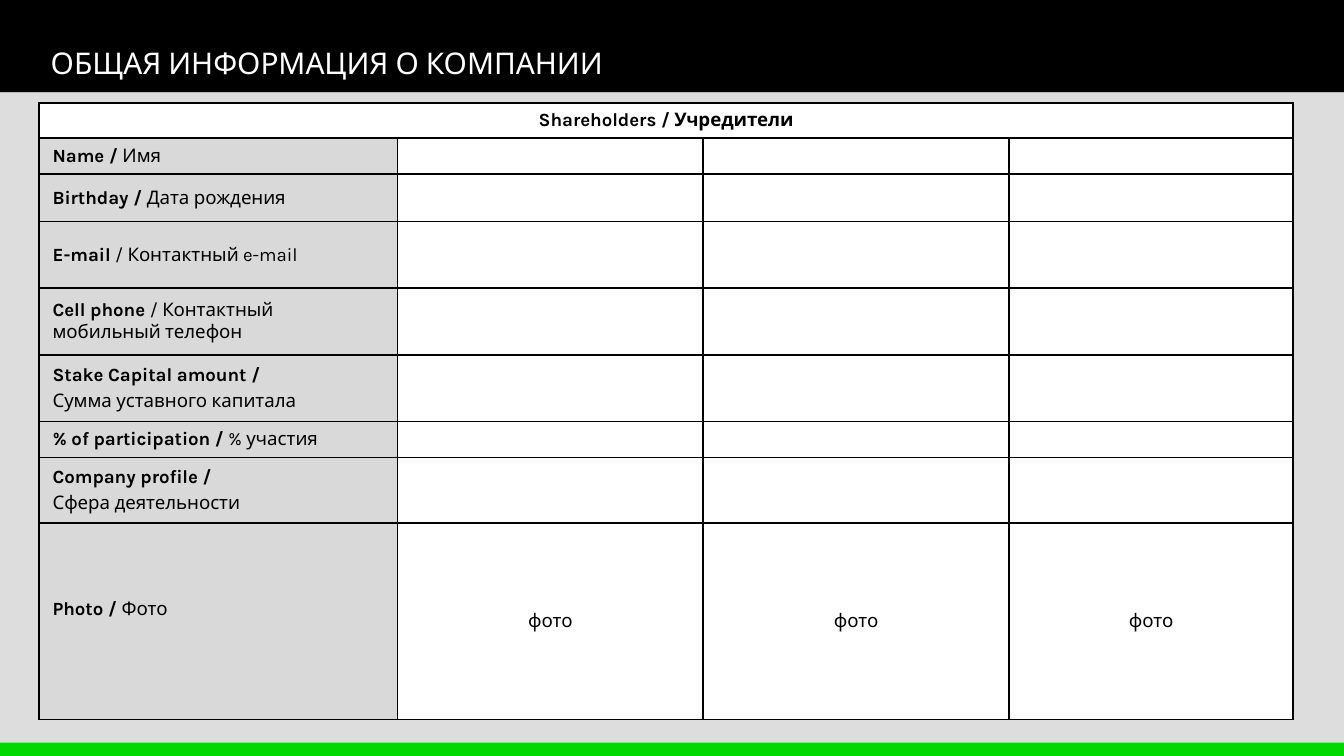
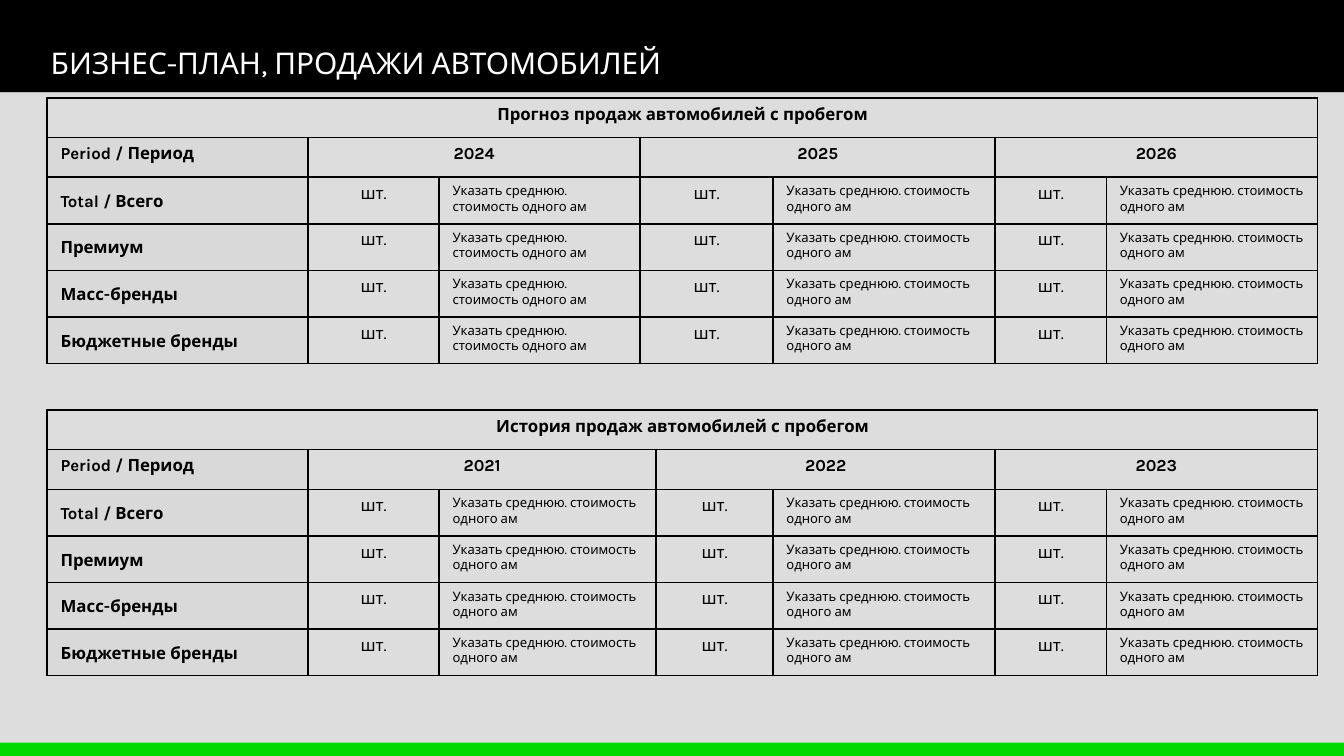
from lxml import etree
from pptx import Presentation
from pptx.dml.color import RGBColor
from pptx.enum.shapes import MSO_SHAPE
from pptx.enum.text import MSO_ANCHOR, PP_ALIGN
from pptx.oxml.ns import qn
from pptx.util import Cm, Pt

RECTANGLE = MSO_SHAPE.RECTANGLE
TOP, MIDDLE = MSO_ANCHOR.TOP, MSO_ANCHOR.MIDDLE
LEFT, CENTER = PP_ALIGN.LEFT, PP_ALIGN.CENTER

BLACK = RGBColor(0x00, 0x00, 0x00)
WHITE = RGBColor(0xFF, 0xFF, 0xFF)
BACKDROP = RGBColor(0xDD, 0xDD, 0xDD)
LABEL_GREY = RGBColor(0xD9, 0xD9, 0xD9)
GREEN = RGBColor(0x00, 0xD9, 0x00)

FONT = "Karla"
SLIDE_W, SLIDE_H = 25.4, 14.29
HEADER_H, FOOTER_H = 1.75, 0.25

# Shareholder form: paragraphs of (bold part, regular part), row height
SHAREHOLDER_ROWS = [
    ([("Name / ", "Имя")], 0.66),
    ([("Birthday / ", "Дата рождения")], 0.9),
    ([("E-mail", " / Контактный e-mail")], 1.26),
    ([("Cell phone ", "/ Контактный мобильный телефон")], 1.26),
    ([("Stake Capital amount /", ""), ("", "Сумма уставного капитала")], 1.26),
    ([("% of participation / ", "% участия")], 0.66),
    ([("Company profile /", ""), ("", "Сфера деятельности")], 1.24),
    ([("Photo / ", "Фото")], 3.71),
]
SEGMENTS = ["Total / Всего", "Премиум", "Масс-бренды", "Бюджетные бренды"]


def add_band(slide, top, height, colour):
    band = slide.shapes.add_shape(RECTANGLE, 0, Cm(top), Cm(SLIDE_W), Cm(height))
    band.shadow.inherit = False
    band.fill.solid()
    band.fill.fore_color.rgb = colour
    band.line.fill.background()


def set_font(paragraph, size, colour=BLACK, bold=None):
    font = paragraph.font
    font.name, font.size, font.bold = FONT, Pt(size), bold
    font.color.rgb = colour


def add_titled_slide(prs, title):
    slide = prs.slides.add_slide(prs.slide_layouts[6])
    add_band(slide, 0, HEADER_H, BLACK)
    add_band(slide, HEADER_H, SLIDE_H - HEADER_H, BACKDROP)
    add_band(slide, SLIDE_H - FOOTER_H, FOOTER_H, GREEN)
    heading = slide.shapes.add_textbox(Cm(0.71), Cm(0.05), Cm(19.2), Cm(1.5))
    heading.text_frame.word_wrap = True
    paragraph = heading.text_frame.paragraphs[0]
    paragraph.text = title
    paragraph.line_spacing = 2.0
    set_font(paragraph, 16, WHITE)
    return slide


def style_cell(cell, fill, size):
    """Black borders, fill, and a text size that keeps empty cells low."""
    properties = cell._tc.get_or_add_tcPr()
    for side in ("lnL", "lnR", "lnT", "lnB"):
        border = etree.SubElement(properties, qn(f"a:{side}"), w=str(Pt(1)))
        ink = etree.SubElement(border, qn("a:solidFill"))
        etree.SubElement(ink, qn("a:srgbClr"), val=str(BLACK))
    if fill is None:
        cell.fill.background()
    else:
        cell.fill.solid()
        cell.fill.fore_color.rgb = fill
    paragraph = cell.text_frame.paragraphs[0]
    etree.SubElement(paragraph._p, qn("a:endParaRPr"), sz=str(size * 100))


def add_grid(slide, left, top, widths, heights, fill, size):
    """Bordered table with a merged heading row and grey labels below it."""
    table = slide.shapes.add_table(
        len(heights), len(widths), Cm(left), Cm(top),
        Cm(sum(widths)), Cm(sum(heights))).table
    table.first_row = table.horz_banding = False
    for column, width in zip(table.columns, widths):
        column.width = Cm(width)
    for r, height in enumerate(heights):
        table.rows[r].height = Cm(height)
        for c in range(len(widths)):
            is_label = r > 0 and c == 0
            style_cell(table.cell(r, c), LABEL_GREY if is_label else fill, size)
    table.cell(0, 0).merge(table.cell(0, len(widths) - 1))
    return table


def write(cell, text, size, bold=False, align=LEFT, anchor=TOP):
    cell.vertical_anchor = anchor
    paragraph = cell.text_frame.paragraphs[0]
    paragraph.add_run().text = text
    paragraph.alignment = align
    set_font(paragraph, size, bold=bold)
    return paragraph


def tighten(cell):
    cell.margin_top = cell.margin_bottom = Cm(0.1)


def write_bilingual(cell, lines):
    cell.vertical_anchor = MIDDLE
    tighten(cell)
    frame = cell.text_frame
    for i, parts in enumerate(lines):
        paragraph = frame.add_paragraph() if i else frame.paragraphs[0]
        if i:
            paragraph.space_before = Pt(2)
        for text, bold in zip(parts, (True, False)):
            if text:
                run = paragraph.add_run()
                run.text = text
                run.font.bold = bold
        set_font(paragraph, 10)


def add_shareholder_form(slide):
    heights = [0.66] + [height for _, height in SHAREHOLDER_ROWS]
    table = add_grid(slide, 0.74, 1.95, [6.77, 5.78, 5.78, 5.37], heights,
                     WHITE, 10)
    tighten(table.cell(0, 0))
    write(table.cell(0, 0), "Shareholders / Учредители", 10, True, CENTER, MIDDLE)
    for r, (lines, _) in enumerate(SHAREHOLDER_ROWS, start=1):
        write_bilingual(table.cell(r, 0), lines)
    # The photo label sits slightly above the middle of its row
    photo_row = len(SHAREHOLDER_ROWS)
    table.cell(photo_row, 0).margin_bottom = Cm(0.55)
    for c in (1, 2, 3):
        write(table.cell(photo_row, c), "фото", 10, False, CENTER, MIDDLE)


def add_sales_table(slide, top, title, first_year, widths):
    heights = [0.75, 0.75] + [0.88] * len(SEGMENTS)
    table = add_grid(slide, 0.89, top, widths, heights, None, 9)
    write(table.cell(0, 0), title, 9, True, CENTER)
    write(table.cell(1, 0), "Period / Период", 9, True)
    pair_columns = range(1, len(widths), 2)
    for offset, c in enumerate(pair_columns):
        table.cell(1, c).merge(table.cell(1, c + 1))
        write(table.cell(1, c), str(first_year + offset), 9, True, CENTER)
    for r, segment in enumerate(SEGMENTS, start=2):
        tighten(table.cell(r, 0))
        label = write(table.cell(r, 0), segment, 9, True, anchor=MIDDLE)
        label.line_spacing = Pt(12)
        for c in pair_columns:
            write(table.cell(r, c), "шт.", 9, align=CENTER)
            write(table.cell(r, c + 1), "Указать среднюю. стоимость одного ам", 7)


def main():
    prs = Presentation()
    prs.slide_width, prs.slide_height = Cm(SLIDE_W), Cm(SLIDE_H)

    # Company information
    company = add_titled_slide(prs, "ОБЩАЯ ИНФОРМАЦИЯ О КОМПАНИИ")
    add_shareholder_form(company)

    # Sales plan: forecast above, history below
    plan = add_titled_slide(prs, "БИЗНЕС-ПЛАН, ПРОДАЖИ АВТОМОБИЛЕЙ")
    add_sales_table(plan, 1.85, "Прогноз продаж автомобилей с пробегом", 2024,
                    [4.93, 2.48, 3.8, 2.51, 4.2, 2.1, 3.99])
    add_sales_table(plan, 7.75, "История продаж автомобилей с пробегом", 2021,
                    [4.93, 2.48, 4.1, 2.21, 4.2, 2.1, 3.99])

    prs.save("out.pptx")


if __name__ == "__main__":
    main()
